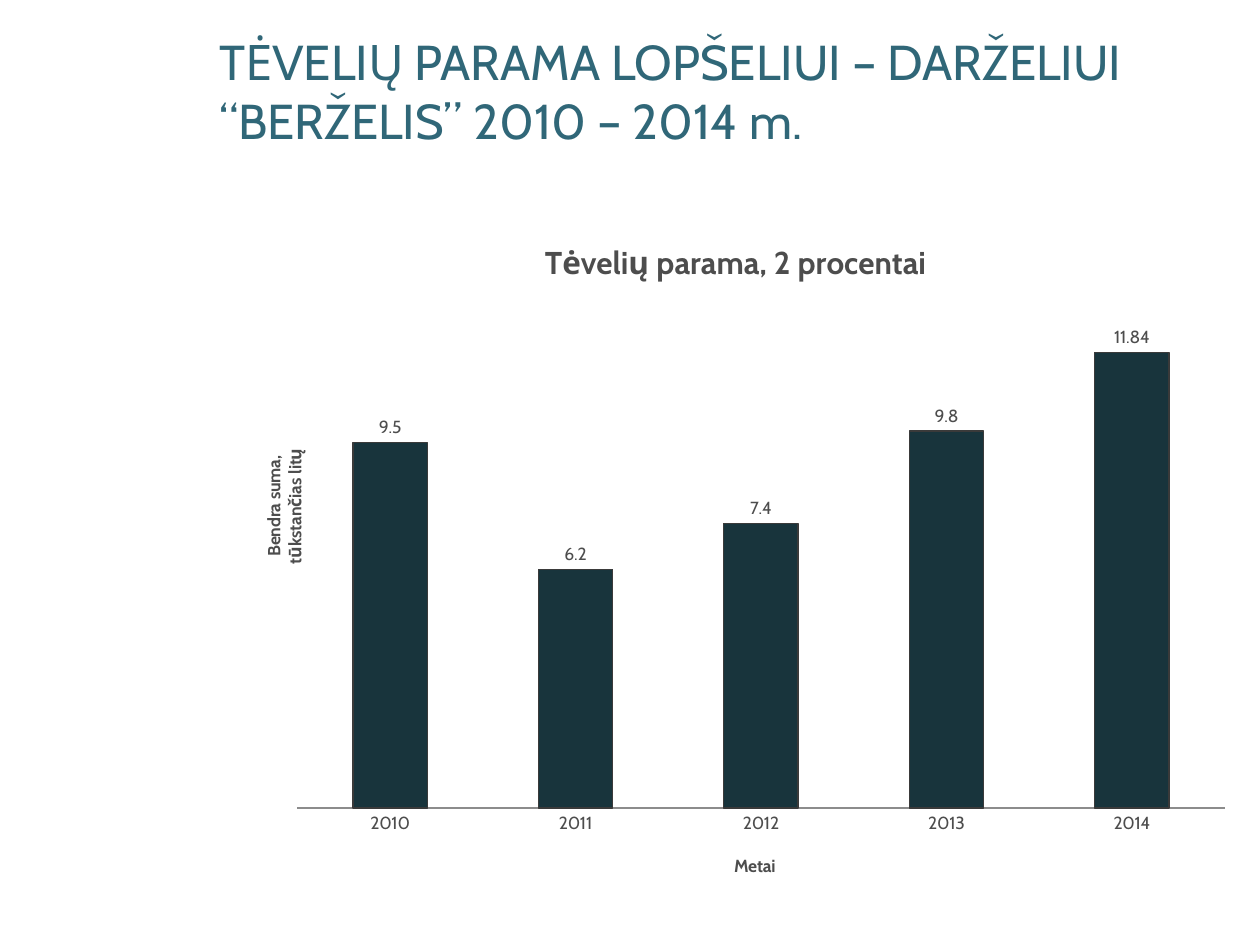
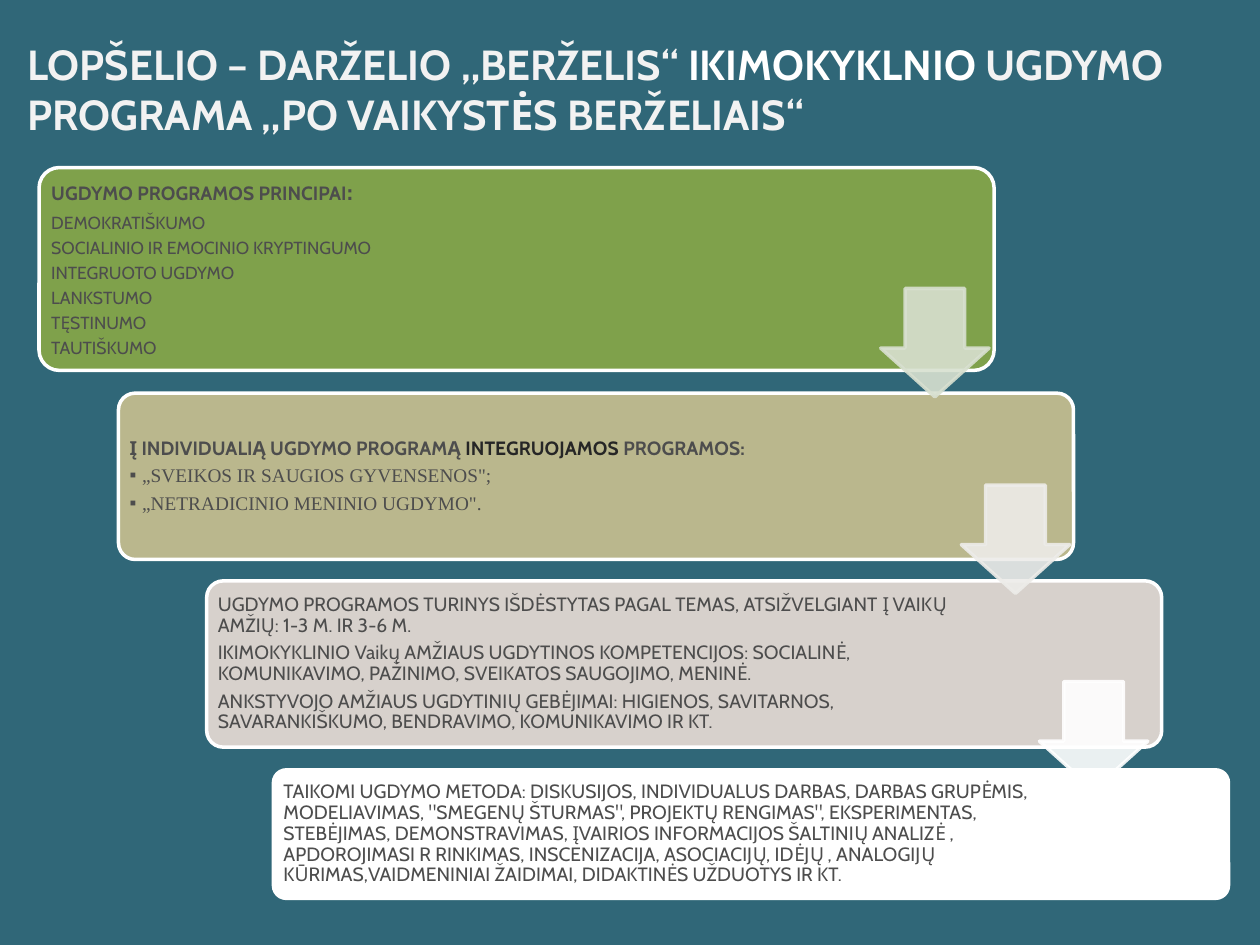
"""Builds two slides on a kindergarten: parents' support and the curriculum."""
from dataclasses import dataclass

from lxml import etree
from pptx import Presentation
from pptx.chart.data import CategoryChartData
from pptx.dml.color import RGBColor
from pptx.enum.chart import XL_CHART_TYPE as ChartType, XL_LABEL_POSITION as LabelPosition
from pptx.enum.chart import XL_TICK_MARK as TickMark
from pptx.enum.shapes import MSO_SHAPE as Preset
from pptx.enum.text import MSO_ANCHOR as Anchor, PP_ALIGN as Align
from pptx.oxml.ns import qn
from pptx.util import Inches, Pt


@dataclass(frozen=True)
class Theme:
    font: str = "Cabin"
    list_font: str = "Times New Roman"
    teal: str = "306778"
    white: str = "FFFFFF"
    pale: str = "F2F2F2"
    text: str = "4D4D4D"
    strong: str = "262626"
    bar: str = "18343C"
    bar_edge: str = "3A3A3A"
    axis: str = "8C8C8C"
    support_title: int = 28
    program_title: int = 24
    chart_title: int = 18
    colon: int = 14
    body: int = 11
    small: int = 10


THEME = Theme()
HEAD = {"bold": True}
SMALL = {"size": THEME.small}
LISTED = {"name": THEME.list_font}

SUPPORT_TITLE = [("TĖVELIŲ PARAMA LOPŠELIUI – DARŽELIUI “BERŽELIS” 2010 – 2014 m.", {})]
SUPPORT = {"2010": 9.5, "2011": 6.2, "2012": 7.4, "2013": 9.8, "2014": 11.84}
SUPPORT_HEADING = ["Tėvelių parama, 2 procentai"]
YEARS_HEADING = ["Metai"]
SUM_HEADING = ["Bendra suma,", "tūkstančias litų"]

PROGRAM_TITLE = [
    ("LOPŠELIO – DARŽELIO „BERŽELIS“ ", {}),
    ("IKIMOKYKLNIO ", {"color": THEME.white}),
    ("UGDYMO PROGRAMA „PO VAIKYSTĖS BERŽELIAIS“", {}),
]
PRINCIPLES = [
    "DEMOKRATIŠKUMO",
    "SOCIALINIO IR EMOCINIO KRYPTINGUMO",
    "INTEGRUOTO UGDYMO",
    "LANKSTUMO",
    "TĘSTINUMO",
    "TAUTIŠKUMO",
]
INTEGRATED = ['„SVEIKOS IR SAUGIOS GYVENSENOS";', '„NETRADICINIO MENINIO UGDYMO".']
CONTENTS = [
    "UGDYMO PROGRAMOS TURINYS IŠDĖSTYTAS PAGAL TEMAS, ATSIŽVELGIANT Į VAIKŲ AMŽIŲ: "
    "1-3 M. IR 3-6 M.",
    "IKIMOKYKLINIO Vaikų AMŽIAUS UGDYTINOS KOMPETENCIJOS: SOCIALINĖ, KOMUNIKAVIMO, "
    "PAŽINIMO, SVEIKATOS SAUGOJIMO, MENINĖ.",
    "ANKSTYVOJO AMŽIAUS UGDYTINIŲ GEBĖJIMAI: HIGIENOS, SAVITARNOS, SAVARANKIŠKUMO, "
    "BENDRAVIMO, KOMUNIKAVIMO IR KT.",
]
METHODS = (
    'TAIKOMI UGDYMO METODA: DISKUSIJOS, INDIVIDUALUS DARBAS, DARBAS GRUPĖMIS, MODELIAVIMAS, '
    '"SMEGENŲ ŠTURMAS", PROJEKTŲ RENGIMAS", EKSPERIMENTAS, STEBĖJIMAS, DEMONSTRAVIMAS, '
    'ĮVAIRIOS INFORMACIJOS ŠALTINIŲ ANALIZĖ , APDOROJIMASI R RINKIMAS, INSCENIZACIJA, '
    'ASOCIACIJŲ, IDĖJŲ , ANALOGIJŲ KŪRIMAS,VAIDMENINIAI ŽAIDIMAI, DIDAKTINĖS UŽDUOTYS IR KT.'
)

STEPS = [
    (0.31, 1.33, 1.61, "7FA14B",
     [[("UGDYMO PROGRAMOS PRINCIPAI", HEAD), (":", {"bold": True, "size": THEME.colon})]]
     + [[(principle, SMALL)] for principle in PRINCIPLES]),
    (0.94, 3.12, 1.32, "BAB78D",
     [[("Į INDIVIDUALIĄ UGDYMO PROGRAMĄ ", HEAD),
       ("INTEGRUOJAMOS ", {"bold": True, "color": THEME.strong}),
       ("PROGRAMOS:", HEAD)]]
     + [[(program, LISTED)] for program in INTEGRATED]),
    (1.64, 4.61, 1.32, "D7D1CC", [[(content, {})] for content in CONTENTS]),
    (2.17, 6.11, 1.02, THEME.white, [[(METHODS, {})]]),
]
STEP_WIDTH = 7.58
ARROWS = [(6.99, 2.29, "D8E0D0"), (7.63, 3.85, "EDECE9"), (8.25, 5.41, THEME.white)]
ARROW_SIZE = 0.86
ARROW_OPACITY = 90


def rgb(color):
    return RGBColor.from_string(color)


def set_all(target, **formats):
    for key, setting in formats.items():
        setattr(target, key, setting)


def style_font(font, **formats):
    formats = {"name": THEME.font, "color": THEME.text, "size": THEME.body, "bold": False} | formats
    font.color.rgb = rgb(formats.pop("color"))
    set_all(font, **formats | {"size": Pt(formats["size"])})


def add_runs(paragraph, runs, **base):
    for words, formats in runs:
        run = paragraph.add_run()
        run.text = words
        style_font(run.font, **base | formats)


def paint(target, fill, edge, width):
    target.fill.solid()
    target.fill.fore_color.rgb = rgb(fill)
    target.line.color.rgb = rgb(edge)
    target.line.width = Pt(width)


def add_slide(deck, background, title, place, **formats):
    slide = deck.slides.add_slide(deck.slide_layouts[6])
    slide.background.fill.solid()
    slide.background.fill.fore_color.rgb = rgb(background)
    frame = slide.shapes.add_textbox(*map(Inches, place)).text_frame
    set_all(frame, word_wrap=True, vertical_anchor=Anchor.MIDDLE)
    add_runs(frame.paragraphs[0], title, **formats)
    return slide


def place_part(parent, index, **places):
    for old in parent.findall(qn("c:layout")):
        parent.remove(old)
    layout = etree.Element(qn("c:layout"))
    manual = etree.SubElement(layout, qn("c:manualLayout"))
    for key, setting in places.items():
        etree.SubElement(manual, qn(f"c:{key}")).set("val", str(setting))
    parent.insert(index, layout)


def write_heading(heading, lines, x, y, size, rotation=0):
    frame = heading.text_frame
    for index, line in enumerate(lines):
        paragraph = frame.add_paragraph() if index else frame.paragraphs[0]
        paragraph.alignment = Align.CENTER
        add_runs(paragraph, [(line, {})], size=size, bold=True)
    frame._txBody.find(qn("a:bodyPr")).set("rot", str(rotation * 60000))
    place_part(heading._element, 1, xMode="edge", yMode="edge", x=x, y=y)


def add_support_chart(slide):
    support = CategoryChartData()
    support.categories = list(SUPPORT)
    support.add_series("Series 1", list(SUPPORT.values()))
    place = map(Inches, (1.8, 1.64, 8, 5.55))
    chart = slide.shapes.add_chart(ChartType.COLUMN_CLUSTERED, *place, support).chart
    set_all(chart, has_legend=False, has_title=True)
    style_font(chart.font, size=THEME.small)
    write_heading(chart.chart_title, SUPPORT_HEADING, 0.31, 0.04, THEME.chart_title)

    years, sums = chart.category_axis, chart.value_axis
    write_heading(years.axis_title, YEARS_HEADING, 0.5, 0.92, THEME.small)
    write_heading(sums.axis_title, SUM_HEADING, 0.03, 0.34, THEME.small, rotation=-90)
    set_all(years, major_tick_mark=TickMark.NONE, has_major_gridlines=False)
    years.format.line.color.rgb = rgb(THEME.axis)
    set_all(sums, minimum_scale=0, maximum_scale=14, has_major_gridlines=False, visible=False)

    bars = chart.plots[0]
    set_all(bars, gap_width=150, overlap=-25, vary_by_categories=False, has_data_labels=True)
    set_all(bars.data_labels, show_value=True, position=LabelPosition.OUTSIDE_END)
    style_font(bars.data_labels.font, size=THEME.small)
    paint(bars.series[0].format, THEME.bar, THEME.bar_edge, 0.75)
    place_part(chart._chartSpace.chart.plotArea, 0, layoutTarget="inner", xMode="edge",
               yMode="edge", x=0.07, y=0.09, w=0.92, h=0.77)


def add_preset(slide, preset, place, color, adjustments):
    shape = slide.shapes.add_shape(preset, *map(Inches, place))
    shape.shadow.inherit = False
    for index, adjustment in enumerate(adjustments):
        shape.adjustments[index] = adjustment
    return shape


def add_bullet(paragraph):
    properties = paragraph._p.get_or_add_pPr()
    indent = Inches(0.1)
    properties.set("marL", str(indent))
    properties.set("indent", str(-indent))
    etree.SubElement(properties, qn("a:buFont")).set("typeface", THEME.list_font)
    etree.SubElement(properties, qn("a:buChar")).set("char", "▪")


def add_step(slide, left, top, height, color, paragraphs):
    step = add_preset(slide, Preset.ROUNDED_RECTANGLE, (left, top, STEP_WIDTH, height), color, [0.1])
    paint(step, color, THEME.white, 2)
    frame = step.text_frame
    set_all(frame, word_wrap=True, vertical_anchor=Anchor.MIDDLE, margin_left=Inches(0.05),
            margin_right=Inches(1.52), margin_top=0, margin_bottom=0)
    for index, runs in enumerate(paragraphs):
        paragraph = frame.add_paragraph() if index else frame.paragraphs[0]
        size = max(formats.get("size", THEME.body) for _, formats in runs)
        set_all(paragraph, alignment=Align.LEFT, line_spacing=0.9, space_after=Pt(0.35 * size))
        if runs[0][1] is LISTED:
            add_bullet(paragraph)
        add_runs(paragraph, runs)


def add_arrow(slide, left, top, color):
    arrow = add_preset(slide, Preset.DOWN_ARROW, (left, top, ARROW_SIZE, ARROW_SIZE), color,
                       [0.55, 0.45])
    paint(arrow, color, color, 2)
    for tint in arrow._element.spPr.iter(qn("a:srgbClr")):
        etree.SubElement(tint, qn("a:alpha")).set("val", str(ARROW_OPACITY * 1000))


def main():
    deck = Presentation()
    set_all(deck, slide_width=Inches(10), slide_height=Inches(7.5))

    support = add_slide(deck, THEME.white, SUPPORT_TITLE, (1.64, 0.23, 8.19, 0.97),
                        size=THEME.support_title, color=THEME.teal)
    add_support_chart(support)

    program = add_slide(deck, THEME.teal, PROGRAM_TITLE, (0.12, 0.21, 9.72, 0.99),
                        size=THEME.program_title, color=THEME.pale, bold=True)
    for step in STEPS:
        add_step(program, *step)
    for arrow in ARROWS:
        add_arrow(program, *arrow)

    deck.save("out.pptx")


if __name__ == "__main__":
    main()
